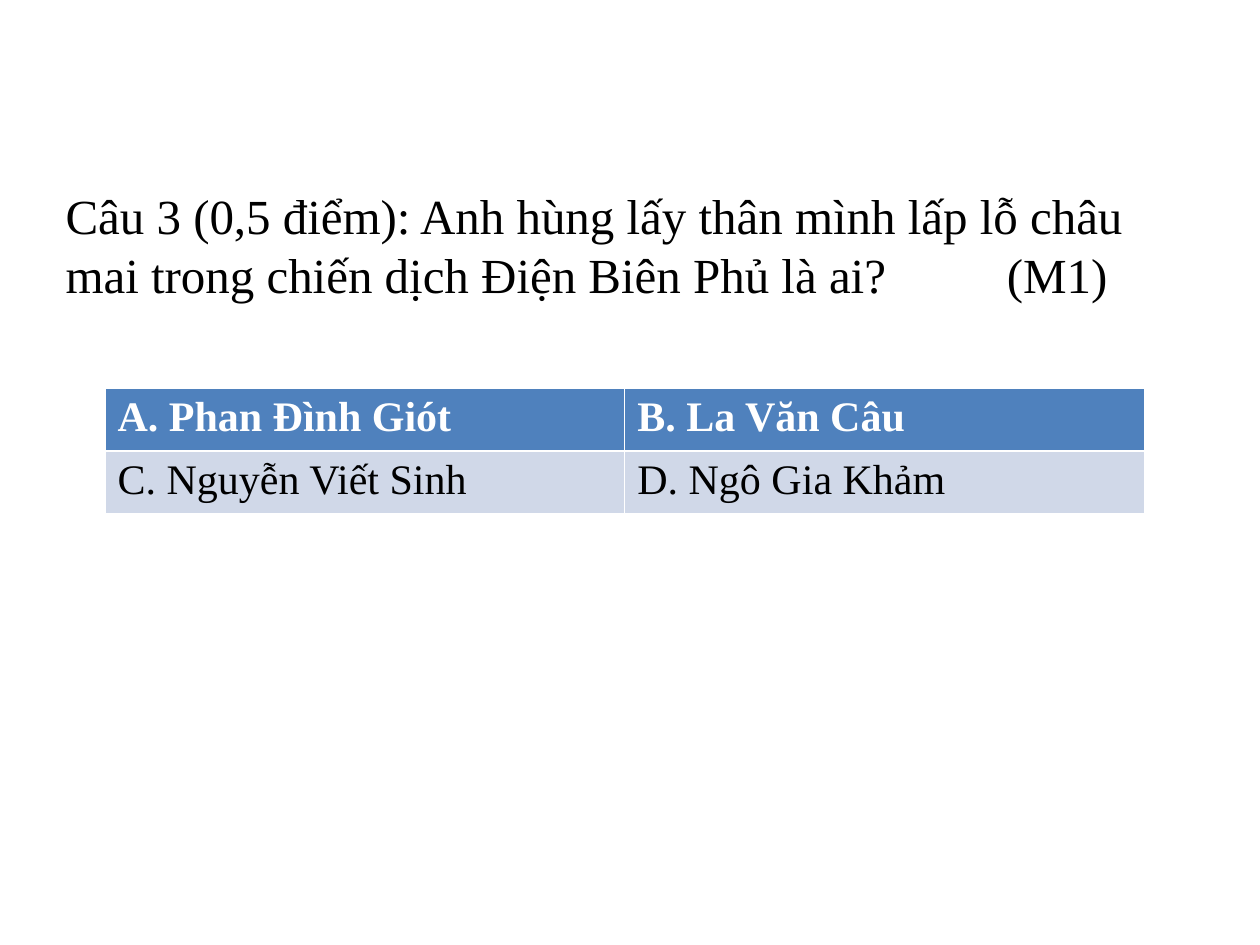
from lxml import etree
from pptx import Presentation
from pptx.dml.color import RGBColor
from pptx.enum.text import MSO_ANCHOR, MSO_AUTO_SIZE, PP_ALIGN
from pptx.oxml.ns import qn
from pptx.util import Inches, Pt

LEFT = PP_ALIGN.LEFT
TOP = MSO_ANCHOR.TOP
FIT_SHAPE = MSO_AUTO_SIZE.SHAPE_TO_FIT_TEXT

COLORS = {"text": "000000", "header_text": "FFFFFF",
          "header": "4F81BD", "band": "D0D8E8"}
FONT = "Times New Roman"
ANSWERS = [["A. Phan Đình Giót", "B. La Văn Câu"],
           ["C. Nguyễn Viết Sinh", "D. Ngô Gia Khảm"]]
ROW_H = Inches(0.5)


def write(tf, text, size=24, color="text", bold=False):
    p = tf.paragraphs[0]
    p.alignment = LEFT
    r = p.add_run()
    r.text = text
    r.font.name = FONT
    r.font.size = Pt(size)
    r.font.bold = bold
    r.font.color.rgb = RGBColor.from_string(COLORS[color])
    return p


prs = Presentation()
prs.slide_width, prs.slide_height = Inches(10), Inches(7.5)
s = prs.slides.add_slide(prs.slide_layouts[5])

# Question, with the level mark set at a tab stop
title = s.shapes.title
title.left, title.top = Inches(0.42), Inches(1.42)
title.width, title.height = Inches(9.25), Inches(1.04)
tf = title.text_frame
tf.word_wrap = True
tf.auto_size = FIT_SHAPE
tf.vertical_anchor = TOP
p = write(tf, "Câu 3 (0,5 điểm): Anh hùng lấy thân mình lấp lỗ châu mai "
              "trong chiến dịch Điện Biên Phủ là ai?\t(M1)", size=28)
tabs = etree.SubElement(p._p.get_or_add_pPr(), qn("a:tabLst"))
etree.SubElement(tabs, qn("a:tab"), pos=str(Inches(7.47)), algn="l")

# Answers
rows, cols = len(ANSWERS), len(ANSWERS[0])
table = s.shapes.add_table(rows, cols, prs.slide_width // 12, Inches(3.08),
                           Inches(8.25), rows * ROW_H).table
for i, answers in enumerate(ANSWERS):
    is_header = i == 0
    for j, answer in enumerate(answers):
        cell = table.cell(i, j)
        cell.fill.solid()
        cell.fill.fore_color.rgb = RGBColor.from_string(
            COLORS["header" if is_header else "band"])
        write(cell.text_frame, answer, bold=is_header,
              color="header_text" if is_header else "text")

prs.save("out.pptx")
